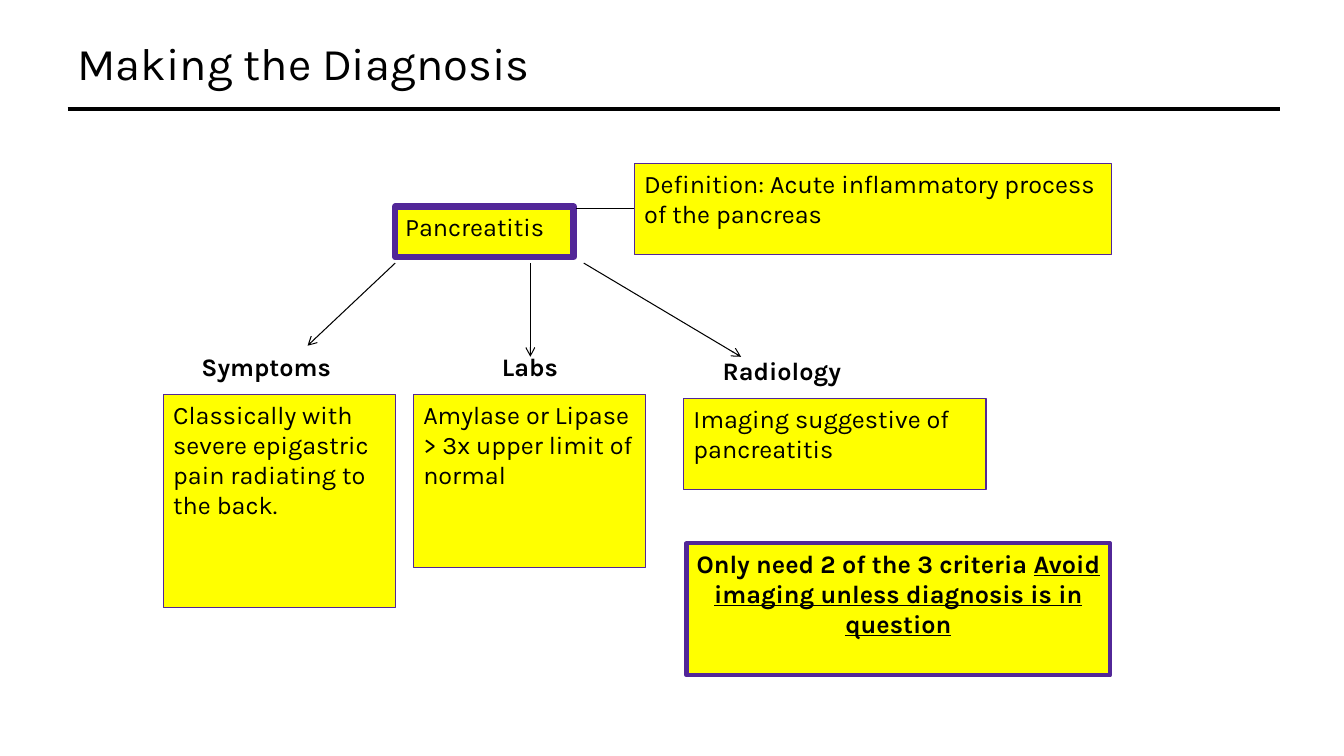
import dataclasses
import pptx
import pptx.util
import pptx.dml.color
import pptx.enum.shapes
import pptx.enum.text
import pptx.oxml
import pptx.oxml.ns

PX = 9144
ALIGN = pptx.enum.text.PP_ALIGN
ANCHOR = pptx.enum.text.MSO_ANCHOR


@dataclasses.dataclass(frozen=True)
class Theme:
    font: str = "Karla"
    ink: str = "000000"
    fill: str = "FFFF00"
    border: str = "522798"
    title_size: float = 32.4
    body_size: float = 18
    thin: float = 0.75
    medium: float = 3
    thick: float = 4.5


THEME = Theme()


def lengths(values):
    return [value * PX for value in values]


def color(name):
    return pptx.dml.color.RGBColor.from_string(name)


def set_text(shape, runs, size=THEME.body_size, align=ALIGN.LEFT, wrap=True):
    frame = shape.text_frame
    frame.word_wrap = wrap
    frame.auto_size = pptx.enum.text.MSO_AUTO_SIZE.SHAPE_TO_FIT_TEXT
    frame.vertical_anchor = ANCHOR.TOP
    para = frame.paragraphs[0]
    para.alignment = align
    for text, bold, underline in runs:
        span = para.add_run()
        span.text = text
        span.font.name = THEME.font
        span.font.size = pptx.util.Pt(size)
        span.font.color.rgb = color(THEME.ink)
        span.font.bold = bold
        span.font.underline = underline


def add_title(page, text, place):
    box = page.shapes.add_textbox(*lengths(place))
    set_text(box, [(text, False, False)], size=THEME.title_size)
    box.text_frame.auto_size = pptx.enum.text.MSO_AUTO_SIZE.NONE
    box.text_frame.vertical_anchor = ANCHOR.MIDDLE
    box.text_frame.paragraphs[0].line_spacing = 0.9


def add_heading(page, text, place, align):
    box = page.shapes.add_textbox(*lengths(place))
    set_text(box, [(text, True, False)], align=align, wrap=False)


def add_box(page, runs, place, weight=THEME.thin, align=ALIGN.LEFT, wrap=True):
    box = page.shapes.add_shape(
        pptx.enum.shapes.MSO_SHAPE.RECTANGLE, *lengths(place))
    box.shadow.inherit = False
    box.fill.solid()
    box.fill.fore_color.rgb = color(THEME.fill)
    box.line.color.rgb = color(THEME.border)
    box.line.width = pptx.util.Pt(weight)
    set_text(box, runs, align=align, wrap=wrap)


def add_line(page, ends, weight=THEME.thin, arrow=False):
    line = page.shapes.add_connector(
        pptx.enum.shapes.MSO_CONNECTOR.STRAIGHT, *lengths(ends))
    line.line.color.rgb = color(THEME.ink)
    line.line.width = pptx.util.Pt(weight)
    if arrow:
        tail = pptx.oxml.parse_xml(
            f'<a:tailEnd {pptx.oxml.ns.nsdecls("a")} type="arrow"/>')
        line.line._get_or_add_ln().append(tail)
    effects = pptx.oxml.parse_xml(
        f'<a:effectLst {pptx.oxml.ns.nsdecls("a")}/>')
    line._element.spPr.append(effects)


def add_criterion(page, heading, heading_place, align, finding, place, arrow):
    add_line(page, arrow, arrow=True)
    add_box(page, [(finding, False, False)], place)
    add_heading(page, heading, heading_place, align)


def main():
    deck = pptx.Presentation()
    deck.slide_width, deck.slide_height = lengths((1333, 750))
    page = deck.slides.add_slide(deck.slide_layouts[6])

    add_line(page, (67, 108, 1270, 108), THEME.medium)
    add_title(page, "Making the Diagnosis", (67, 37, 1200, 56))

    add_box(page, [("Pancreatitis", False, False)],
            (392, 205, 177, 50), THEME.thick, wrap=False)
    add_box(page, [("Definition: Acute inflammatory process of the pancreas",
                    False, False)], (629, 162, 473, 91))
    add_line(page, (571, 207, 629, 207))

    criteria = [
        ("Symptoms", (190, 344, 172, 50), ALIGN.LEFT,
         "Classically with severe epigastric pain radiating to the back.",
         (162, 391, 230, 212), (392, 261, 305, 343)),
        ("Labs", (480, 344, 91, 50), ALIGN.CENTER,
         "Amylase or Lipase > 3x upper limit of normal",
         (410, 391, 230, 172), (526, 261, 526, 354)),
        ("Radiology", (707, 348, 166, 50), ALIGN.LEFT,
         "Imaging suggestive of pancreatitis",
         (678, 395, 300, 91), (579, 261, 735, 354)),
    ]
    for criterion in criteria:
        add_criterion(page, *criterion)

    add_box(page, [("Only need 2 of the 3 criteria ", True, False),
                   ("Avoid imaging unless diagnosis is in question", True, True)],
            (681, 539, 420, 131), THEME.medium, ALIGN.CENTER)

    deck.save("out.pptx")


if __name__ == "__main__":
    main()
